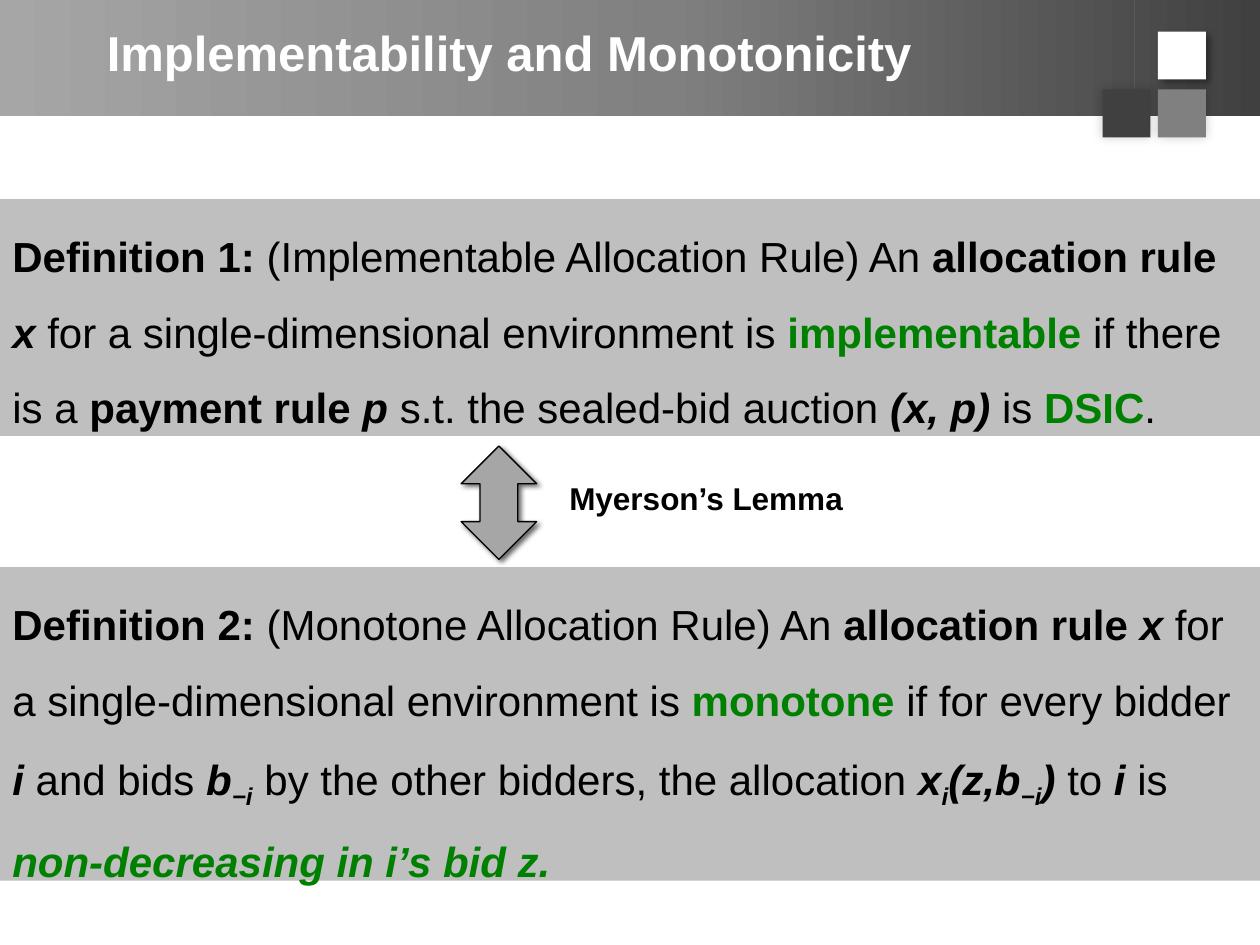
from copy import deepcopy
from lxml.etree import SubElement as Sub
from pptx import Presentation
from pptx.dml.color import RGBColor as Rgb
from pptx.enum.shapes import MSO_SHAPE as Kind
from pptx.enum.text import MSO_ANCHOR as Anchor, MSO_AUTO_SIZE as Fit
from pptx.oxml.ns import qn
from pptx.util import Inches, Pt

TITLE = "Implementability and Monotonicity"
LEMMA = "Myerson’s Lemma"
BAR = [(0, "A6A6A6"), (0.53, "808080"), (1, "404040")]
TILT = [(8.85, 0.21), (9.13, 0.36), (9.13, 0.67), (8.85, 0.52)]
SIDE = 0.38
TILES = [
    (8.75, 0.71, "404040", ("000000", 20, 6, 0, 225)),
    (9.19, 0.71, "808080", ("000000", 20, 6, 0, 315)),
    (9.19, 0.25, "FFFFFF", ("000000", 40, 4, 3, 45)),
]
DEF1 = [
    ("Definition 1: ", "b"), ("(Implementable Allocation Rule) An ", ""),
    ("allocation rule ", "b"), ("x", "bi"),
    (" for a single-dimensional environment is ", ""),
    ("implementable ", "bg"), ("if there is a ", ""),
    ("payment rule ", "b"), ("p ", "bi"),
    ("s.t. the sealed-bid auction ", ""), ("(x, p)", "bi"),
    (" is ", ""), ("DSIC", "bg"), (".", ""),
]
DEF2 = [
    ("Definition 2: ", "b"), ("(Monotone Allocation Rule) An ", ""),
    ("allocation rule ", "b"), ("x ", "bi"),
    ("for a single-dimensional environment is ", ""),
    ("monotone", "bg"), (" if for every bidder ", ""), ("i", "bi"),
    (" and bids ", ""), ("b", "bi"), ("−i", "bis"),
    (" by the other bidders, the allocation ", ""),
    ("x", "bi"), ("i", "bis"), ("(z,b", "bi"), ("−i", "bis"), (") ", "bi"),
    ("to ", ""), ("i", "bi"), (" is ", ""),
    ("non-decreasing in i’s bid z.", "big"),
]
PANELS = [(1.58, 1.88, DEF1, 0), (4.5, 2.49, DEF2, 2)]


def tint(code):
    return Rgb.from_string(code)


def shade(shape, code, alpha, blur, dist, turn):
    shape.shadow.inherit = False
    glow = shape._element.spPr.find(qn("a:effectLst"))
    drop = Sub(glow, qn("a:outerShdw"), blurRad=str(Pt(blur)),
               dist=str(Pt(dist)), dir=str(turn * 60000), rotWithShape="0")
    tone = Sub(drop, qn("a:srgbClr"), val=code)
    Sub(tone, qn("a:alpha"), val=str(alpha * 1000))


def paint(shape, fill, line=None, drop=None):
    shape.shadow.inherit = False
    shape.fill.solid()
    shape.fill.fore_color.rgb = tint(fill)
    if line:
        shape.line.color.rgb = tint(line)
        shape.line.width = Pt(0.75)
    else:
        shape.line.fill.background()
    if drop:
        shade(shape, *drop)
    return shape


def block(slide, kind, box, fill, **look):
    shape = slide.shapes.add_shape(kind, *map(Inches, box))
    return paint(shape, fill, **look)


def write(shape, runs, size=24, color="000000", anchor=Anchor.TOP,
          wrap=True, fit=Fit.SHAPE_TO_FIT_TEXT, lead=None, after=0):
    frame = shape.text_frame
    frame.word_wrap, frame.auto_size = wrap, fit
    frame.vertical_anchor = anchor
    para = frame.paragraphs[0]
    para.alignment = 1
    para.space_after = Pt(after)
    if lead:
        para.line_spacing = lead
    for text, style in runs:
        run = para.add_run()
        run.text = text
        font = run.font
        font.name, font.size = "Arial", Pt(size)
        font.bold, font.italic = "b" in style, "i" in style
        font.color.rgb = tint("008000" if "g" in style else color)
        if "s" in style:
            run._r.get_or_add_rPr().set("baseline", "-25000")


def banner(slide):
    bar = block(slide, Kind.RECTANGLE, (0, 0, 10, 0.92), "808080")
    bar.fill.gradient()
    bar.fill.gradient_angle = 0
    stops = bar._element.spPr.find(".//" + qn("a:gsLst"))
    stops.append(deepcopy(stops[0]))
    for stop, (place, code) in zip(bar.fill.gradient_stops, BAR):
        stop.position, stop.color.rgb = place, tint(code)


def tiles(slide):
    pen = slide.shapes.build_freeform(*TILT[0], scale=Inches(1))
    pen.add_line_segments(TILT[1:])
    paint(pen.convert_to_shape(), "BFBFBF", drop=("000000", 40, 4, 3, 0))
    for left, top, fill, drop in TILES:
        block(slide, Kind.RECTANGLE, (left, top, SIDE, SIDE), fill, drop=drop)


def label(slide, box, text, **look):
    write(slide.shapes.add_textbox(*map(Inches, box)), [(text, "b")], **look)


def main():
    """Build the slide on two matching definitions and save it."""
    deck = Presentation()
    deck.slide_width, deck.slide_height = Inches(10), Inches(7.5)
    slide = deck.slides.add_slide(deck.slide_layouts[6])
    banner(slide)
    tiles(slide)
    label(slide, (0.75, 0, 8.42, 0.83), TITLE, size=28, color="FFFFFF",
          anchor=Anchor.MIDDLE, fit=Fit.NONE)
    for top, high, runs, after in PANELS:
        panel = block(slide, Kind.RECTANGLE, (0, top, 10, high), "BFBFBF")
        write(panel, runs, lead=1.5, after=after)
    block(slide, Kind.UP_DOWN_ARROW, (3.66, 3.54, 0.6, 0.9), "A6A6A6",
          line="000000", drop=("000000", 60, 3, 2, 45))
    label(slide, (4.42, 3.75, 2.4, 0.4), LEMMA, size=18, wrap=False)
    deck.save("out.pptx")


if __name__ == "__main__":
    main()
